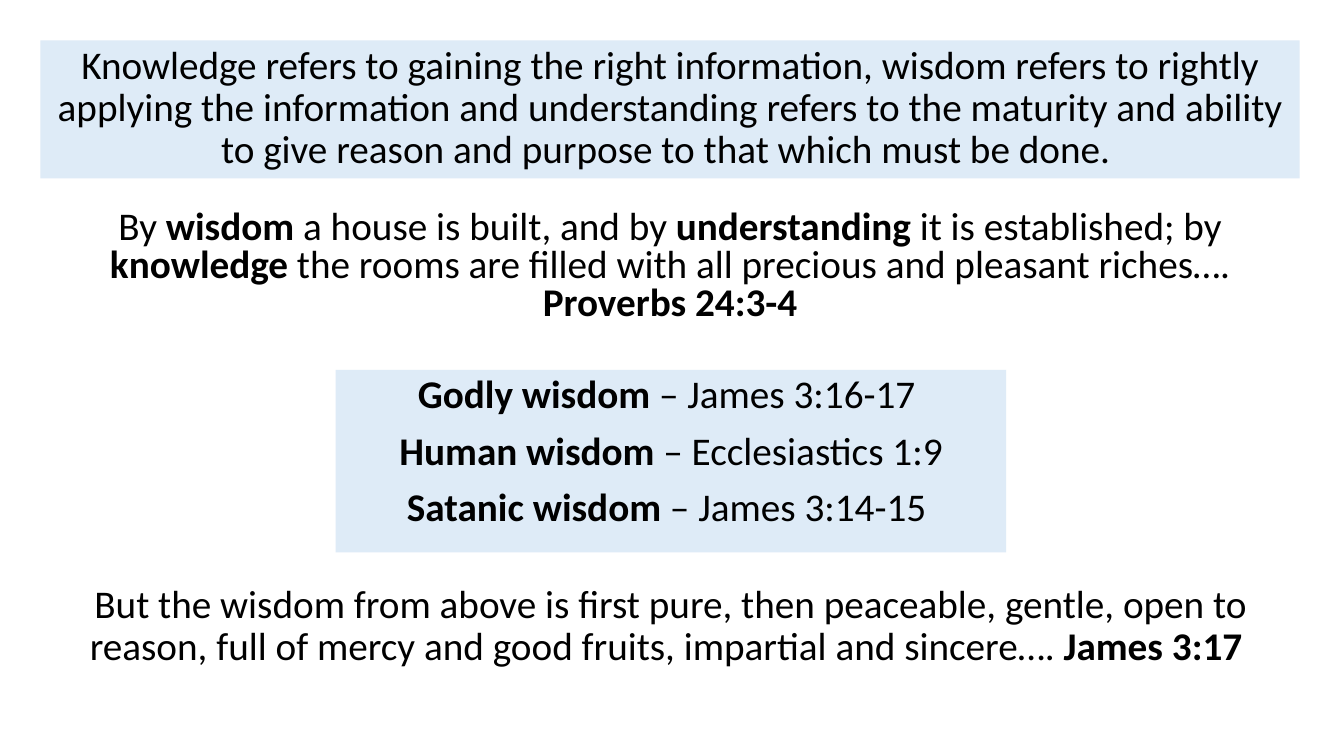
from pptx import Presentation
from pptx import util as u
from pptx.dml import color
from pptx.enum import shapes, text

COLORS = {"panel": "DEEBF7", "text": "000000"}
FONT = {"name": "Calibri", "size": u.Pt(28)}
FRAME = {"word_wrap": True, "vertical_anchor": text.MSO_ANCHOR.TOP}
PARAGRAPH = {"alignment": text.PP_ALIGN.CENTER, "space_before": u.Pt(10)}

DEFINITION = [[
    ("Knowledge refers to gaining the right information, wisdom refers to "
     "rightly applying the information and understanding refers to the "
     "maturity and ability to give reason and purpose to that which must "
     "be done. ", False),
]]
PROVERB = [[
    ("By ", False),
    ("wisdom", True),
    (" a house is built, and by ", False),
    ("understanding", True),
    (" it is established; by ", False),
    ("knowledge", True),
    (" the rooms are filled with all precious and pleasant riches…. ", False),
    ("Proverbs 24:3-4", True),
]]
WISDOM_KINDS = [
    [("Godly wisdom ", True), ("– James 3:16-17 ", False)],
    [("Human wisdom ", True), ("– Ecclesiastics 1:9", False)],
    [("Satanic wisdom ", True), ("– James 3:14-15 ", False)],
]
WISDOM_ABOVE = [[
    ("But the wisdom from above is first pure, then peaceable, gentle, open "
     "to reason, full of mercy and good fruits, impartial and sincere…. ",
     False),
    ("James 3:17 ", True),
]]


def apply(obj, values):
    for name, value in values.items():
        setattr(obj, name, value)


def write(sp, paragraphs, spacing):
    tf = sp.text_frame
    apply(tf, FRAME)
    for i, runs in enumerate(paragraphs):
        p = tf.add_paragraph() if i else tf.paragraphs[0]
        apply(p, {**PARAGRAPH, "line_spacing": spacing})
        for words, bold in runs:
            r = p.add_run()
            r.text = words
            apply(r.font, {**FONT, "bold": bold})
            r.font.color.rgb = color.RGBColor.from_string(COLORS["text"])


def add_panel(s, box, paragraphs, spacing=0.9):
    sp = s.shapes.add_shape(shapes.MSO_SHAPE.RECTANGLE, *map(u.Inches, box))
    sp.shadow.inherit = False
    sp.fill.solid()
    sp.fill.fore_color.rgb = color.RGBColor.from_string(COLORS["panel"])
    sp.line.fill.background()
    write(sp, paragraphs, spacing)


def add_verse(s, box, paragraphs, spacing=0.9):
    sp = s.shapes.add_textbox(*map(u.Inches, box))
    write(sp, paragraphs, spacing)


def main():
    prs = Presentation()
    prs.slide_width, prs.slide_height = u.Inches(13.33), u.Inches(7.5)
    s = prs.slides.add_slide(prs.slide_layouts[6])
    add_panel(s, (0.4, 0.4, 12.49, 1.37), DEFINITION)
    add_panel(s, (3.33, 3.67, 6.65, 1.81), WISDOM_KINDS)
    add_verse(s, (0.25, 5.75, 12.8, 1.49), WISDOM_ABOVE)
    add_verse(s, (0.4, 2.04, 12.49, 1.36), PROVERB, spacing=0.8)
    prs.save("out.pptx")


if __name__ == "__main__":
    main()
